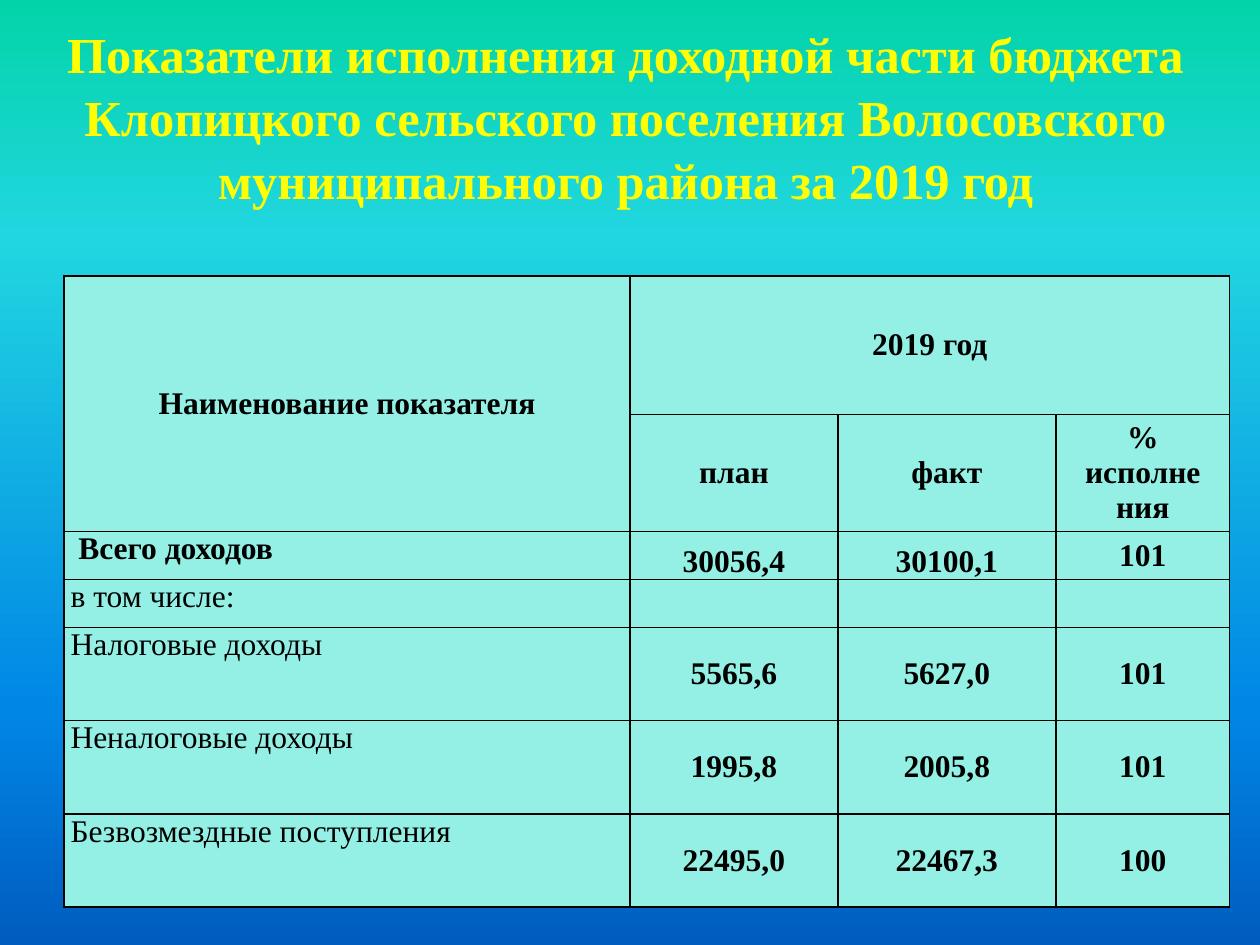
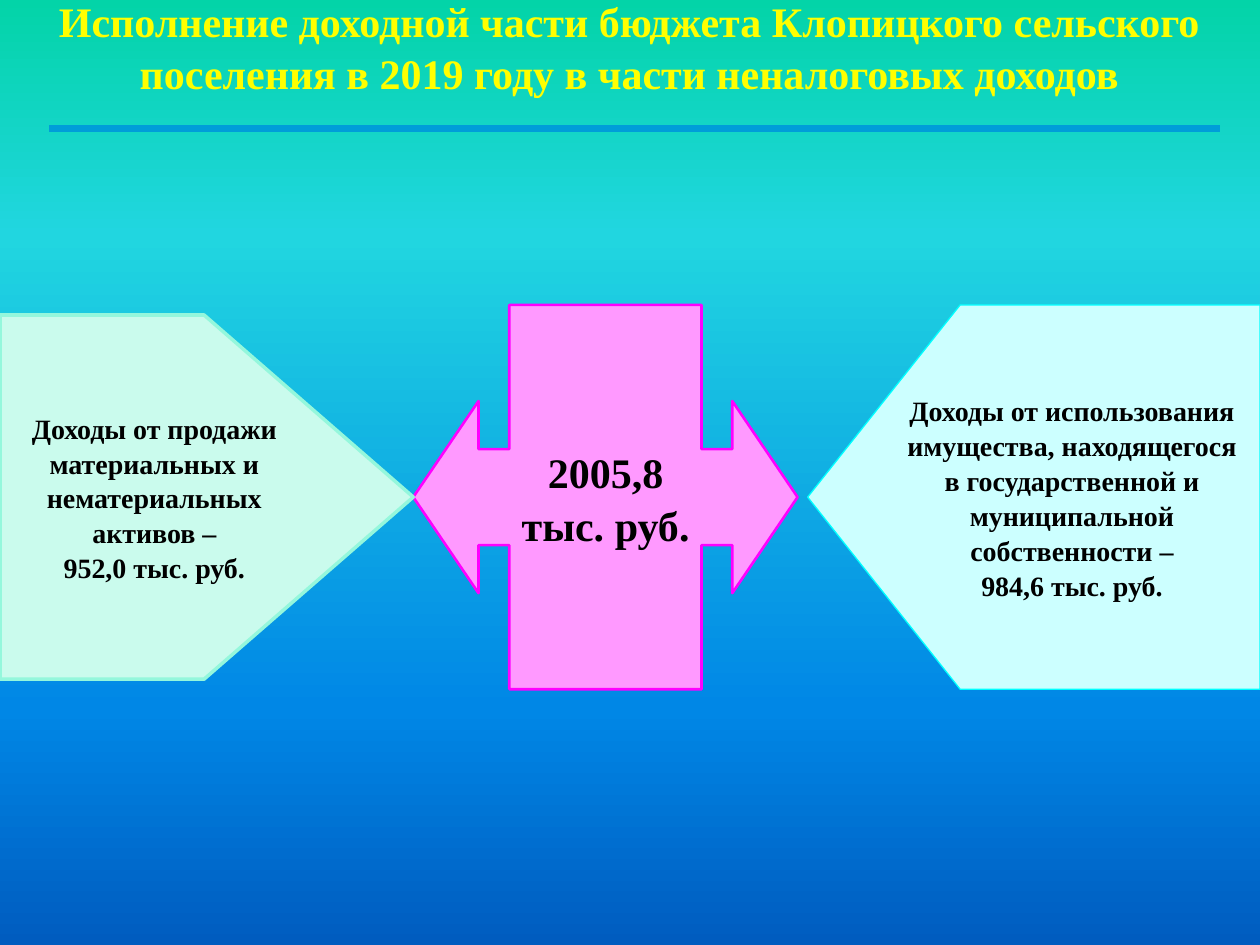
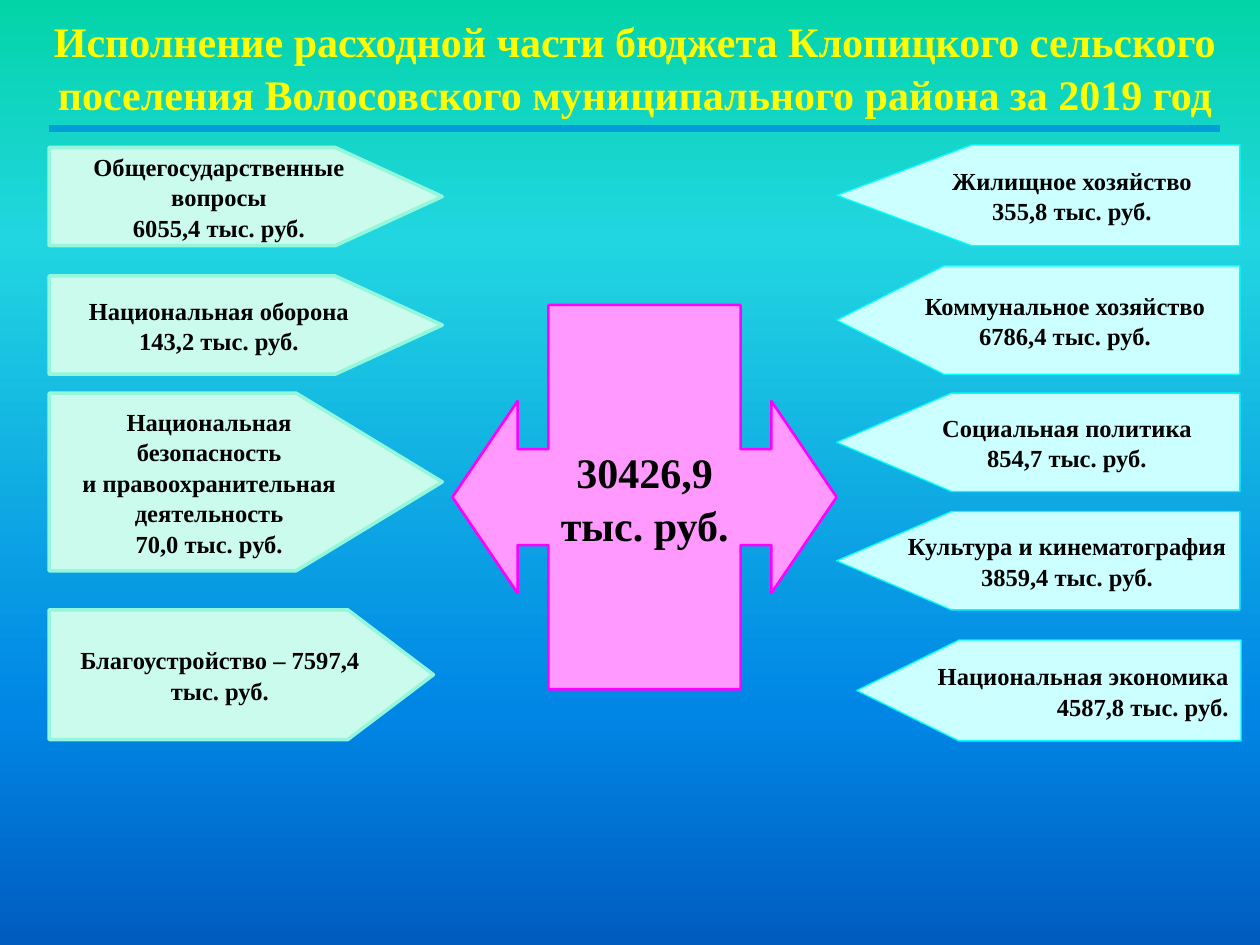
from copy import deepcopy

from pptx import Presentation
from pptx.dml.color import RGBColor
from pptx.enum import shapes, text
from pptx.oxml import ns, parse_xml
from pptx.util import Inches, Pt

FONT = "Times New Roman"
HUES = {
    "title": "FFFF00", "ink": "000000", "rule": "009DD9", "cell": "94F0E4",
    "mint": "CAFBED", "mint_edge": "94F7DC", "ice": "CCFFFF", "ice_edge": "00FFFF",
    "pink": "FF99FF", "pink_edge": "FF00FF",
}
SKY = [(0, "03D4A8"), (0.25, "21D6E0"), (0.75, "0087E6"), (1, "005CBF")]
MID = text.PP_ALIGN.CENTER
RIGHT = text.PP_ALIGN.RIGHT
KIND = shapes.MSO_SHAPE


def hue(name):
    return RGBColor.from_string(HUES[name])


def place(box):
    return [Inches(n) for n in box]


def paint(master):
    """Give every slide the sky gradient."""
    fill = master.background.fill
    fill.gradient()
    fill.gradient_angle = 270
    stops = master.element.find(".//" + ns.qn("a:gsLst"))
    for _ in range(len(SKY) - len(stops)):
        stops.append(deepcopy(stops[0]))
    for stop, (spot, tint) in zip(fill.gradient_stops, SKY):
        stop.position = spot
        stop.color.rgb = RGBColor.from_string(tint)


def write(frame, lines, size, tint="ink", align=MID, bold=True, gap=None):
    frame.text = lines
    for para in frame.paragraphs:
        para.alignment = align
        para.line_spacing = gap
        para.font.name = FONT
        para.font.size = Pt(size)
        para.font.bold = bold
        para.font.color.rgb = hue(tint)


def title(slide, box, words, size=24):
    frame = slide.shapes.add_textbox(*place(box)).text_frame
    frame.word_wrap = True
    frame.vertical_anchor = text.MSO_ANCHOR.BOTTOM
    frame.margin_left = frame.margin_right = frame.margin_bottom = 0
    write(frame, words, size, "title", gap=1.04)


def rule(slide):
    left, top, right = Inches(0.39), Inches(1.02), Inches(9.68)
    line = slide.shapes.add_connector(shapes.MSO_CONNECTOR.STRAIGHT, left, top, right, top)
    line.line.color.rgb = hue("rule")
    line.line.width = Pt(3.75)
    line._element.spPr.append(parse_xml(f"<a:effectLst {ns.nsdecls('a')}/>"))


def block(slide, kind, box, look, width, lines, size, align=MID):
    """Add a filled shape with its words in the middle."""
    shape = slide.shapes.add_shape(kind, *place(box))
    shape.shadow.inherit = False
    shape.fill.solid()
    shape.fill.fore_color.rgb = hue(look)
    shape.line.color.rgb = hue(look + "_edge")
    shape.line.width = Pt(width)
    frame = shape.text_frame
    frame.word_wrap = True
    frame.vertical_anchor = text.MSO_ANCHOR.MIDDLE
    write(frame, lines, size, align=align, gap=1.04)
    return shape


def left_plate(slide, box, tip, lines, size=14):
    plate = block(slide, KIND.PENTAGON, box, "mint", 2, lines, size)
    plate.adjustments[0] = tip / box[3]


def right_plate(slide, box, tip, lines, size=14, align=MID):
    plate = block(slide, KIND.PENTAGON, box, "ice", 0.75, lines, size, align)
    plate.adjustments[0] = tip / box[3]
    plate.rotation = 180
    plate.text_frame._txBody.bodyPr.set("rot", "10800000")
    plate.text_frame.word_wrap = align == MID


def total(slide, left, sum_):
    """Add the two-way arrow that holds the total."""
    box = (left, 2.42, 3.05, 3.05)
    arrow = block(slide, KIND.UP_DOWN_ARROW_CALLOUT, box, "pink", 1.5,
                  f"{sum_}\nтыс. руб.", 24)
    for i, part in enumerate((0.25, 0.25, 0.17, 0.5)):
        arrow.adjustments[i] = part
    arrow.rotation = 270
    arrow.text_frame._txBody.bodyPr.set("vert", "eaVert")
    arrow.text_frame.word_wrap = False


def edge(cell):
    props = cell._tc.get_or_add_tcPr()
    for i, side in enumerate(("lnL", "lnR", "lnT", "lnB")):
        props.insert(i, parse_xml(
            f'<a:{side} {ns.nsdecls("a")} w="12700"><a:solidFill>'
            f'<a:srgbClr val="{HUES["ink"]}"/></a:solidFill></a:{side}>'))


def grid(slide, box, cols, rows, data):
    table = slide.shapes.add_table(len(rows), len(cols), *place(box)).table
    for col, width in zip(table.columns, cols):
        col.width = Inches(width)
    for row, height in zip(table.rows, rows):
        row.height = Inches(height)
    for r, line in enumerate(data):
        for c, words in enumerate(line):
            cell = table.cell(r, c)
            cell.fill.solid()
            cell.fill.fore_color.rgb = hue("cell")
            edge(cell)
            cell.margin_left = cell.margin_right = Inches(0.05)
            cell.margin_top = cell.margin_bottom = 0
            name = c == 0 and r > 1
            cell.vertical_anchor = text.MSO_ANCHOR.TOP if name else text.MSO_ANCHOR.MIDDLE
            write(cell.text_frame, words, 18, align=text.PP_ALIGN.LEFT if name else MID,
                  bold=not name or r == 2)
    for c in (1, 2):
        table.cell(2, c).vertical_anchor = text.MSO_ANCHOR.BOTTOM
    table.cell(0, 0).merge(table.cell(1, 0))
    table.cell(0, 1).merge(table.cell(0, 3))


def income(slide):
    title(slide, (0.16, 0.23, 9.61, 1.43),
          "Показатели исполнения доходной части бюджета Клопицкого сельского "
          "поселения Волосовского муниципального района за 2019 год", 28.8)
    grid(slide, (0.51, 2.19, 9.25, 5.01), (4.49, 1.65, 1.73, 1.38),
         (1.1, 0.93, 0.38, 0.38, 0.74, 0.74, 0.74), [
             ("Наименование показателя", "2019 год", "", ""),
             ("", "план", "факт", "%\vисполне ния"),
             (" Всего доходов", "30056,4", "30100,1", "101"),
             ("в том числе:", "", "", ""),
             ("Налоговые доходы", "5565,6", "5627,0", "101"),
             ("Неналоговые доходы", "1995,8", "2005,8", "101"),
             ("Безвозмездные поступления", "22495,0", "22467,3", "100"),
         ])


def nontax(slide):
    title(slide, (0.23, 0.16, 9.53, 0.62),
          "Исполнение доходной части бюджета Клопицкого сельского поселения "
          "в 2019 году в части неналоговых доходов")
    total(slide, 3.28, "2005,8")
    rule(slide)
    right_plate(slide, (6.41, 2.42, 3.59, 3.05), 1.21,
                "Доходы от использования имущества, находящегося в государственной и "
                "муниципальной собственности –\n984,6 тыс. руб.", 16)
    left_plate(slide, (0, 2.5, 3.28, 2.89), 1.66,
               "Доходы от продажи материальных и нематериальных активов –\n"
               "952,0 тыс. руб.", 16)


def costs(slide):
    title(slide, (0.39, 0.16, 9.3, 0.78),
          "Исполнение расходной части бюджета Клопицкого сельского поселения "
          "Волосовского муниципального района за 2019 год")
    total(slide, 3.59, "30426,9")
    rule(slide)
    for top, high, tip, lines in (
        (1.15, 0.8, 1.07, "Жилищное хозяйство\n355,8 тыс. руб."),
        (2.11, 0.86, 0.85, "Коммунальное хозяйство\n6786,4 тыс. руб."),
        (3.12, 0.78, 0.91, "Социальная политика\n854,7 тыс. руб."),
        (4.06, 0.78, 0.91, "Культура и кинематография\n3859,4 тыс. руб."),
    ):
        right_plate(slide, (6.64, top, 3.2, high), tip, lines)
    right_plate(slide, (6.8, 5.08, 3.05, 0.8), 0.81,
                "Национальная экономика\n4587,8 тыс. руб.", align=RIGHT)
    for top, wide, high, tip, lines in (
        (1.17, 3.12, 0.78, 0.85, "Общегосударственные вопросы\n6055,4 тыс. руб."),
        (2.19, 3.12, 0.78, 0.85, "Национальная оборона\n143,2 тыс. руб."),
        (3.12, 3.12, 1.41, 1.16, "Национальная безопасность\n"
                                 "и правоохранительная деятельность\n70,0 тыс. руб."),
        (4.84, 3.05, 1.03, 0.68, "Благоустройство – 7597,4 тыс. руб."),
    ):
        left_plate(slide, (0.39, top, wide, high), tip, lines)


def main():
    prs = Presentation()
    prs.slide_width, prs.slide_height = Inches(10), Inches(7.5)
    paint(prs.slide_master)
    for build in (income, nontax, costs):
        build(prs.slides.add_slide(prs.slide_layouts[6]))
    prs.save("out.pptx")


if __name__ == "__main__":
    main()
